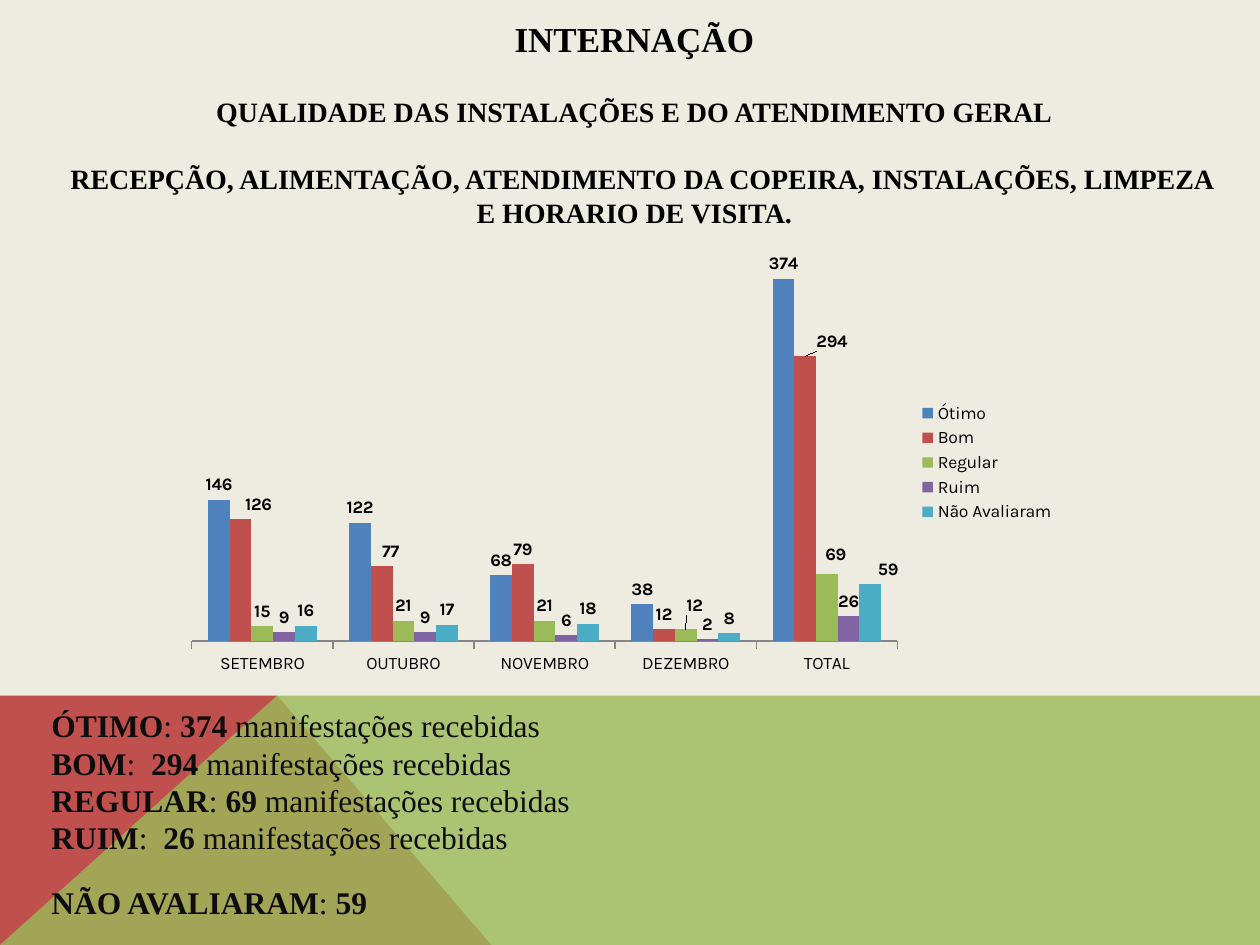
import dataclasses
import typing

import lxml.etree
import pptx
import pptx.chart.data
import pptx.dml.color
import pptx.enum.chart
import pptx.enum.text
import pptx.oxml
import pptx.oxml.ns
import pptx.util

WIDTH, HEIGHT = 10, 7.5
SERIF = "Times New Roman"
BAND_TOP = 5.52 / HEIGHT


@dataclasses.dataclass(frozen=True)
class Area:
    left: float
    top: float
    width: float
    height: float

    def lengths(self) -> list[int]:
        return [
            pptx.util.Inches(self.left * WIDTH),
            pptx.util.Inches(self.top * HEIGHT),
            pptx.util.Inches(self.width * WIDTH),
            pptx.util.Inches(self.height * HEIGHT),
        ]


@dataclasses.dataclass(frozen=True)
class Panel:
    corners: list[tuple[float, float]]
    color: str
    opacity: int = 100


@dataclasses.dataclass(frozen=True)
class Line:
    runs: list[tuple[str, bool]]
    size: float
    pitch: float
    before: float = 0
    indent: float = 0


@dataclasses.dataclass(frozen=True)
class Rating:
    name: str
    counts: list[int]
    color: str
    label_shifts: dict[int, tuple[float, float]] = dataclasses.field(default_factory=dict)


MONTHS = ["SETEMBRO", "OUTUBRO", "NOVEMBRO", "DEZEMBRO", "TOTAL"]
RATINGS = [
    Rating("Ótimo", [146, 122, 68, 38, 374], "4F81BD"),
    Rating("Bom", [126, 77, 79, 12, 294], "C0504D",
           {0: (0.02, 0), 1: (0.01, 0), 4: (0.03, 0)}),
    Rating("Regular", [15, 21, 21, 12, 69], "9BBB59",
           {3: (0.01, -0.02), 4: (0.01, -0.01)}),
    Rating("Ruim", [9, 9, 6, 2, 26], "8064A2"),
    Rating("Não Avaliaram", [16, 17, 18, 8, 59], "4BACC6", {4: (0.02, 0)}),
]
PANELS = [
    Panel([(0, 1), (0, BAND_TOP), (0.22, BAND_TOP), (0.39, 1)], "C0504D"),
    Panel([(0, 1), (0.22, BAND_TOP), (1, BAND_TOP), (1, 1)], "9BBB59", 80),
]
HEADING = [
    Line([("INTERNAÇÃO", True)], 20, 23),
    Line([("QUALIDADE DAS INSTALAÇÕES E DO ATENDIMENTO GERAL", True)], 16, 19.3, 20),
    Line([("RECEPÇÃO, ALIMENTAÇÃO, ATENDIMENTO DA COPEIRA, INSTALAÇÕES, LIMPEZA "
           "E HORARIO DE VISITA.", True)], 16, 19.3, 19.3, 0.12),
]


def color(value: str) -> pptx.dml.color.RGBColor:
    return pptx.dml.color.RGBColor.from_string(value)


def apply(target: typing.Any, values: dict[str, typing.Any]) -> None:
    for name, value in values.items():
        setattr(target, name, value)


def paint(fill: typing.Any, value: str) -> None:
    fill.solid()
    fill.fore_color.rgb = color(value)


def draw_panel(slide: typing.Any, panel: Panel) -> None:
    points = [
        (pptx.util.Inches(x * WIDTH), pptx.util.Inches(y * HEIGHT))
        for x, y in panel.corners
    ]
    builder = slide.shapes.build_freeform(*points[0])
    builder.add_line_segments(points[1:], close=True)
    shape = builder.convert_to_shape()
    shape.shadow.inherit = False
    paint(shape.fill, panel.color)
    shape.line.fill.background()
    if panel.opacity < 100:
        tint = shape.fill._xPr.find(".//" + pptx.oxml.ns.qn("a:srgbClr"))
        alpha = lxml.etree.SubElement(tint, pptx.oxml.ns.qn("a:alpha"))
        alpha.set("val", str(panel.opacity * 1000))


def draw_text(slide: typing.Any, area: Area, lines: list[Line], ink: str,
              alignment: typing.Any, inset: float) -> None:
    frame = slide.shapes.add_textbox(*area.lengths()).text_frame
    apply(frame, {
        "word_wrap": True,
        "margin_top": pptx.util.Inches(inset),
        "margin_bottom": pptx.util.Inches(inset),
    })
    for index, line in enumerate(lines):
        paragraph = frame.add_paragraph() if index else frame.paragraphs[0]
        apply(paragraph, {
            "alignment": alignment,
            "line_spacing": pptx.util.Pt(line.pitch),
            "space_before": pptx.util.Pt(line.before),
        })
        if line.indent:
            paragraph._p.get_or_add_pPr().set("indent", str(pptx.util.Inches(line.indent)))
        for text, bold in line.runs:
            run = paragraph.add_run()
            run.text = text
            apply(run.font, {"name": SERIF, "size": pptx.util.Pt(line.size), "bold": bold})
            run.font.color.rgb = color(ink)


def manual_layout(values: dict[str, typing.Any]) -> typing.Any:
    layout = pptx.oxml.parse_xml(f"<c:layout {pptx.oxml.ns.nsdecls('c')}/>")
    manual = lxml.etree.SubElement(layout, pptx.oxml.ns.qn("c:manualLayout"))
    for name, value in values.items():
        lxml.etree.SubElement(manual, pptx.oxml.ns.qn(f"c:{name}")).set("val", str(value))
    return layout


def format_series(series: typing.Any, rating: Rating) -> None:
    outside = pptx.enum.chart.XL_LABEL_POSITION.OUTSIDE_END
    paint(series.format.fill, rating.color)
    series.invert_if_negative = False
    apply(series.data_labels, {"show_value": True, "position": outside})
    series.data_labels.font.bold = True
    for index in rating.label_shifts:
        label = series.points[index].data_label
        label.position = outside
        label.font.bold = True
    for element in series._element.iter(pptx.oxml.ns.qn("c:dLbl")):
        position = element.find(pptx.oxml.ns.qn("c:idx"))
        x, y = rating.label_shifts[int(position.get("val"))]
        position.addnext(manual_layout({"x": x, "y": y}))


def draw_chart(slide: typing.Any, area: Area) -> None:
    data = pptx.chart.data.CategoryChartData()
    data.categories = MONTHS
    for rating in RATINGS:
        data.add_series(rating.name, rating.counts)
    kind = pptx.enum.chart.XL_CHART_TYPE.COLUMN_CLUSTERED
    chart = slide.shapes.add_chart(kind, *area.lengths(), data).chart
    apply(chart, {"has_title": False, "has_legend": True})
    apply(chart.font, {"name": "Karla", "size": pptx.util.Pt(10)})
    chart.font.color.rgb = color("000000")
    apply(chart.legend, {
        "position": pptx.enum.chart.XL_LEGEND_POSITION.RIGHT,
        "include_in_layout": False,
    })
    apply(chart.value_axis, {
        "visible": False, "has_major_gridlines": False,
        "minimum_scale": 0, "maximum_scale": 400,
    })
    chart.category_axis.major_tick_mark = pptx.enum.chart.XL_TICK_MARK.OUTSIDE
    chart.category_axis.format.line.color.rgb = color("868686")
    plot = chart.plots[0]
    apply(plot, {"gap_width": 150, "overlap": 0, "vary_by_categories": False})
    for series, rating in zip(plot.series, RATINGS):
        format_series(series, rating)
    plot_area = chart._chartSpace.chart.plotArea
    for element in plot_area.findall(pptx.oxml.ns.qn("c:layout")):
        plot_area.remove(element)
    plot_area.insert(0, manual_layout({
        "layoutTarget": "inner", "xMode": "edge", "yMode": "edge",
        "x": 0.02, "y": 0.02, "w": 0.79, "h": 0.89,
    }))


def summary_lines() -> list[Line]:
    lines = []
    for rating in RATINGS:
        last = rating is RATINGS[-1]
        gap = ":  " if rating.name in ("Bom", "Ruim") else ": "
        runs = [(rating.name.upper(), True), (gap, False)]
        if last:
            runs.append((str(rating.counts[-1]), True))
        else:
            runs += [(f"{rating.counts[-1]} ", True), ("manifestações recebidas", False)]
        lines.append(Line(runs, 18, 21.4, 15.7 if last else 0))
    return lines


def main() -> None:
    presentation = pptx.Presentation()
    apply(presentation, {
        "slide_width": pptx.util.Inches(WIDTH),
        "slide_height": pptx.util.Inches(HEIGHT),
    })
    slide = presentation.slides.add_slide(presentation.slide_layouts[6])
    paint(slide.background.fill, "EEECE1")
    for panel in PANELS:
        draw_panel(slide, panel)
    align = pptx.enum.text.PP_ALIGN
    draw_text(slide, Area(0.031, 0.02, 0.945, 0.23), HEADING, "000000", align.CENTER, 0)
    draw_text(slide, Area(0.031, 0.741, 0.445, 0.25), summary_lines(), "0D0D0D",
              align.LEFT, 0.05)
    draw_chart(slide, Area(0.138, 0.259, 0.709, 0.461))
    presentation.save("out.pptx")


if __name__ == "__main__":
    main()
